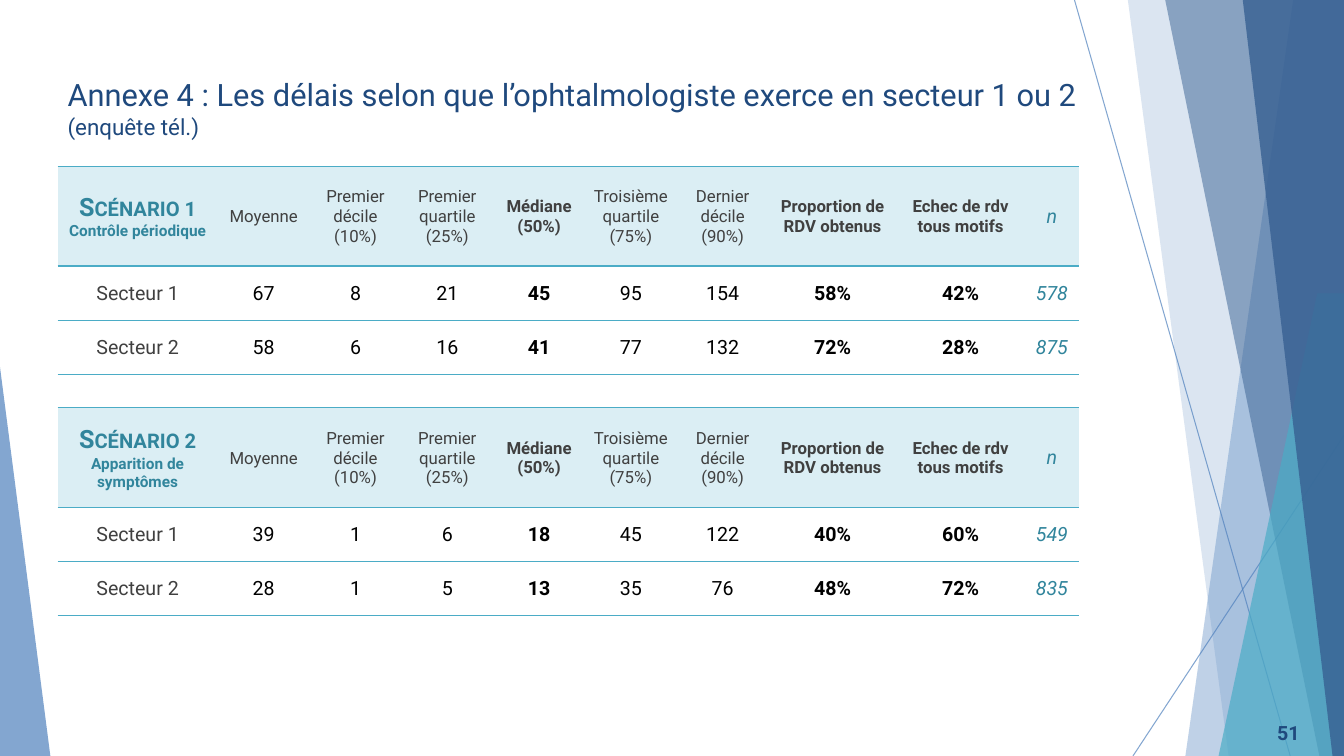
from dataclasses import dataclass

import lxml.etree
import pptx
import pptx.dml.color
import pptx.enum.shapes
import pptx.enum.text
import pptx.oxml.ns
import pptx.util

qn = pptx.oxml.ns.qn
MIDDLE = pptx.enum.text.MSO_ANCHOR.MIDDLE
ALIGN = pptx.enum.text.PP_ALIGN
NO_STYLE = "{2D5ABB26-0587-4C30-8999-92F81FD0307C}"


@dataclass(frozen=True)
class Theme:
    font: str = "Roboto"
    navy: str = "1F497D"
    blue: str = "4F81BD"
    dark_blue: str = "376092"
    teal: str = "4BACC6"
    dark_teal: str = "31859C"
    pale_teal: str = "DBEEF4"
    grey: str = "404040"
    black: str = "000000"
    title_size: int = 22
    subtitle_size: int = 16
    scenario_size: int = 18
    value_size: int = 14
    header_size: int = 12
    detail_size: int = 11


@dataclass(frozen=True)
class Ray:
    start: tuple[float, float]
    end: tuple[float, float]


@dataclass(frozen=True)
class Facet:
    """Band reaching the right edge; x and y are percentages of the slide."""
    top_left: float
    bottom_left: float
    top: float
    color: str
    opacity: int


@dataclass(frozen=True)
class Column:
    header: str
    width: float
    bold: bool = False


@dataclass(frozen=True)
class Scenario:
    name: str
    detail: str
    top: float
    rows: tuple[str, ...]


THEME = Theme()
WIDTH = pptx.util.Inches(13.333)
HEIGHT = pptx.util.Inches(7.5)

RAYS = [Ray((79.95, 0), (96, 100)), Ray((100, 57.6), (84.3, 100))]
FACETS = [
    Facet(96.22, 88.2, 0, THEME.blue, 36),
    Facet(83.92, 91.42, 0, THEME.blue, 20),
    Facet(86.7, 98.17, 0, THEME.dark_blue, 50),
    Facet(98.02, 90.67, 38.8, THEME.teal, 70),
    Facet(92.47, 99.15, 0, THEME.dark_blue, 80),
]

TABLE_LEFT = 4.28
LABEL_WIDTH, STATISTIC_WIDTH, RATE_WIDTH, COUNT_WIDTH = 11.93, 6.83, 9.53, 4.05
ROW_HEIGHTS = [13.2, 7.16, 7.16]
COLUMNS = [
    Column("Moyenne", STATISTIC_WIDTH),
    Column("Premier décile (10%)", STATISTIC_WIDTH),
    Column("Premier quartile\n(25%)", STATISTIC_WIDTH),
    Column("Médiane\n(50%)", STATISTIC_WIDTH, True),
    Column("Troisième quartile (75%)", STATISTIC_WIDTH),
    Column("Dernier décile (90%)", STATISTIC_WIDTH),
    Column("Proportion de RDV obtenus", RATE_WIDTH, True),
    Column("Echec de rdv tous motifs", RATE_WIDTH, True),
    Column("n", COUNT_WIDTH),
]
SCENARIOS = [
    Scenario("Scénario 1", "Contrôle périodique", 22,
             ("67 8 21 45 95 154 58% 42% 578", "58 6 16 41 77 132 72% 28% 875")),
    Scenario("Scénario 2", "Apparition de symptômes", 53.95,
             ("39 1 6 18 45 122 40% 60% 549", "28 1 5 13 35 76 48% 72% 835")),
]


def across(share: float) -> int:
    return round(WIDTH * share / 100)


def down(share: float) -> int:
    return round(HEIGHT * share / 100)


def rgb(color: str) -> pptx.dml.color.RGBColor:
    return pptx.dml.color.RGBColor.from_string(color)


def set_opacity(shape, percent: int) -> None:
    color = shape._element.spPr.find(".//" + qn("a:srgbClr"))
    lxml.etree.SubElement(color, qn("a:alpha"), val=str(percent * 1000))


def paint(shape, color: str, opacity: int) -> None:
    shape.shadow.inherit = False
    shape.fill.solid()
    shape.fill.fore_color.rgb = rgb(color)
    shape.line.fill.background()
    set_opacity(shape, opacity)


def style(run, size: int, color: str, bold: bool = False, italic: bool = False) -> None:
    run.font.name = THEME.font
    run.font.size = pptx.util.Pt(size)
    run.font.color.rgb = rgb(color)
    run.font.bold = bold
    run.font.italic = italic


def draw_background(slide) -> None:
    for ray in RAYS:
        line = slide.shapes.add_connector(
            pptx.enum.shapes.MSO_CONNECTOR.STRAIGHT,
            across(ray.start[0]), down(ray.start[1]), across(ray.end[0]), down(ray.end[1]))
        line.line.color.rgb = rgb(THEME.blue)
        line.line.width = pptx.util.Pt(0.75)
        set_opacity(line, 70)
        lxml.etree.SubElement(line._element.spPr, qn("a:effectLst"))
    for facet in FACETS:
        builder = slide.shapes.build_freeform(across(facet.top_left), down(facet.top))
        builder.add_line_segments([(WIDTH, down(facet.top)), (WIDTH, HEIGHT),
                                   (across(facet.bottom_left), HEIGHT)])
        paint(builder.convert_to_shape(), facet.color, facet.opacity)
    wedge = slide.shapes.add_shape(pptx.enum.shapes.MSO_SHAPE.ISOSCELES_TRIANGLE,
                                   0, down(48.53), across(3.75), down(51.47))
    wedge.adjustments[0] = 0
    paint(wedge, THEME.blue, 70)


def write_title(slide) -> None:
    title = slide.shapes.title
    slide.shapes._spTree.append(title._element)  # bring in front of the facets
    title.left, title.top = across(TABLE_LEFT), down(8.67)
    title.width, title.height = across(80.4), down(11.2)
    frame = title.text_frame
    frame.auto_size = pptx.enum.text.MSO_AUTO_SIZE.NONE
    frame.vertical_anchor = MIDDLE
    paragraph = frame.paragraphs[0]
    paragraph.alignment = ALIGN.LEFT
    parts = [("Annexe 4 : Les délais selon que l’ophtalmologiste exerce en secteur 1 ou 2 ",
              THEME.title_size), ("(enquête tél.)", THEME.subtitle_size)]
    for text, size in parts:
        run = paragraph.add_run()
        run.text = text
        style(run, size, THEME.navy)


def add_borders(cell, sides: tuple[str, ...]) -> None:
    properties = cell._tc.get_or_add_tcPr()
    for position, side in enumerate(sides):
        line = lxml.etree.Element(qn(f"a:ln{side}"), w=str(pptx.util.Pt(1)))
        fill = lxml.etree.SubElement(line, qn("a:solidFill"))
        lxml.etree.SubElement(fill, qn("a:srgbClr"), val=THEME.teal)
        properties.insert(position, line)


def fill_cell(cell, text: str, size: int, color: str,
              bold: bool = False, italic: bool = False) -> None:
    cell.text_frame.text = text
    cell.vertical_anchor = MIDDLE
    cell.margin_left = cell.margin_right = cell.margin_top = pptx.util.Inches(0.01)
    cell.margin_bottom = 0
    for paragraph in cell.text_frame.paragraphs:
        paragraph.alignment = ALIGN.CENTER
        style(paragraph.runs[0], size, color, bold, italic)


def draw_scenario(slide, scenario: Scenario) -> None:
    widths = [LABEL_WIDTH] + [column.width for column in COLUMNS]
    table = slide.shapes.add_table(
        len(ROW_HEIGHTS), len(widths), across(TABLE_LEFT), down(scenario.top),
        across(sum(widths)), down(sum(ROW_HEIGHTS))).table
    table.first_row = table.horz_banding = False
    table._tbl.tblPr.find(qn("a:tableStyleId")).text = NO_STYLE
    for column, width in zip(table.columns, widths):
        column.width = across(width)
    for row, height in zip(table.rows, ROW_HEIGHTS):
        row.height = down(height)

    # Row labels
    heading = table.cell(0, 0)
    fill_cell(heading, f"{scenario.name}\n{scenario.detail}", THEME.detail_size,
              THEME.dark_teal, bold=True)
    name = heading.text_frame.paragraphs[0].runs[0]
    name.font.size = pptx.util.Pt(THEME.scenario_size)
    name.font._element.set("cap", "small")
    for sector in (1, 2):
        fill_cell(table.cell(sector, 0), f"Secteur {sector}", THEME.value_size, THEME.grey)

    # Headers and values
    values = [row.split() for row in scenario.rows]
    for index, column in enumerate(COLUMNS):
        count = column.header == "n"
        for row, text in enumerate([column.header] + [line[index] for line in values]):
            size = THEME.header_size if row == 0 and not count else THEME.value_size
            plain = THEME.grey if row == 0 else THEME.black
            fill_cell(table.cell(row, index + 1), text, size,
                      THEME.dark_teal if count else plain, column.bold, count)

    # Fills and rules
    for row, sides in enumerate([("T", "B"), ("T",), ("B",)]):
        for cell in table.rows[row].cells:
            if row == 0:
                cell.fill.solid()
                cell.fill.fore_color.rgb = rgb(THEME.pale_teal)
            else:
                cell.fill.background()
            add_borders(cell, sides)


def write_slide_number(slide) -> None:
    box = slide.shapes.add_textbox(across(91.8), down(94.27), across(5.63), down(5.33))
    frame = box.text_frame
    frame.word_wrap = True
    frame.vertical_anchor = MIDDLE
    frame.text = "51"
    frame.paragraphs[0].alignment = ALIGN.RIGHT
    style(frame.paragraphs[0].runs[0], THEME.value_size, THEME.navy, bold=True)


def main() -> None:
    presentation = pptx.Presentation()
    presentation.slide_width, presentation.slide_height = WIDTH, HEIGHT
    slide = presentation.slides.add_slide(presentation.slide_layouts.get_by_name("Title Only"))
    draw_background(slide)
    write_title(slide)
    for scenario in SCENARIOS:
        draw_scenario(slide, scenario)
    write_slide_number(slide)
    presentation.save("out.pptx")


if __name__ == "__main__":
    main()
